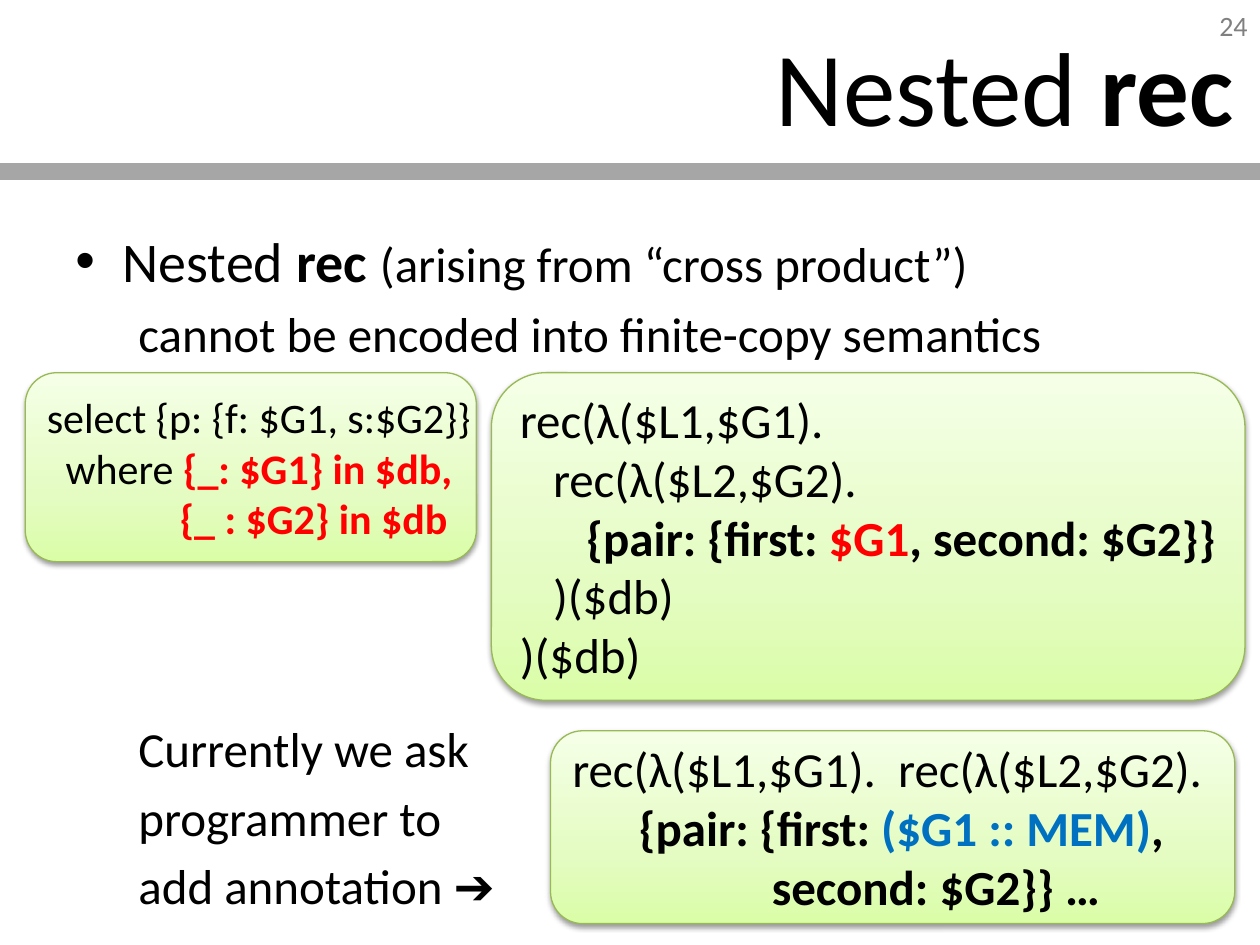
"""Build a slide on nested rec, with code boxes beside the explanation."""
from copy import deepcopy

from lxml.etree import SubElement
from pptx import Presentation
from pptx.dml.color import RGBColor
from pptx.enum.shapes import MSO_CONNECTOR, MSO_SHAPE
from pptx.enum.text import MSO_ANCHOR, PP_ALIGN
from pptx.oxml.ns import qn
from pptx.util import Pt

BOLD = {"bold": True}
RED = {"bold": True, "color": "FF0000"}
BLUE = {"bold": True, "color": "0070C0"}


def rgb(value):
    return RGBColor.from_string(value)


class SlideBuilder:
    font = "Calibri"
    ink = "000000"
    gray = "808080"
    rule_color = "A6A6A6"
    box_line = "98B955"
    box_stops = ((0, "DAFDA7"), (0.35, "E4FCC2"), (1, "F5FFE7"))

    def __init__(self, page):
        self.page = page

    def fill_text(self, shape, paras, size, color=ink, align=PP_ALIGN.LEFT,
                  anchor=MSO_ANCHOR.TOP, wrap=True, space=0):
        frame = shape.text_frame
        for name, value in {"word_wrap": wrap, "vertical_anchor": anchor}.items():
            setattr(frame, name, value)
        for index, (indent, *spans) in enumerate(paras):
            para = frame.paragraphs[0] if index == 0 else frame.add_paragraph()
            for name, value in {"alignment": align, "space_before": Pt(space if index else 0)}.items():
                setattr(para, name, value)
            para._p.get_or_add_pPr().set("marL", str(Pt(indent)))
            for text, extra in spans:
                span = para.add_run()
                span.text = text
                style = {"name": self.font, "size": Pt(size), "bold": False, "color": color} | extra
                span.font.color.rgb = rgb(style.pop("color"))
                for name, value in style.items():
                    setattr(span.font, name, value)
        return frame

    def text(self, left, top, width, height, paras, size, **options):
        box = self.page.shapes.add_textbox(Pt(left), Pt(top), Pt(width), Pt(height))
        return self.fill_text(box, paras, size, **options)

    def bullet(self, para, indent):
        properties = para._p.get_or_add_pPr()
        properties.set("indent", str(-Pt(indent)))
        SubElement(properties, qn("a:buFont"), typeface="Arial")
        SubElement(properties, qn("a:buChar"), char="•")

    def rule(self, top, width, thickness):
        line = self.page.shapes.add_connector(MSO_CONNECTOR.STRAIGHT, 0, Pt(top), Pt(width), Pt(top))
        line.line.color.rgb = rgb(self.rule_color)
        line.line.width = Pt(thickness)
        SubElement(line._element.spPr, qn("a:effectLst"))

    def code(self, left, top, width, height, paras, size):
        box = self.page.shapes.add_shape(
            MSO_SHAPE.ROUNDED_RECTANGLE, Pt(left), Pt(top), Pt(width), Pt(height))
        box.fill.gradient()
        box.fill.gradient_angle = 90
        stops = box._element.spPr.find(".//" + qn("a:gsLst"))
        stops.insert(1, deepcopy(stops[0]))
        for stop, (position, color) in zip(box.fill.gradient_stops, self.box_stops):
            stop.position = position
            stop.color.rgb = rgb(color)
        box.line.color.rgb = rgb(self.box_line)
        box.line.width = Pt(0.75)
        self.shadow(box)
        self.fill_text(box, paras, size, anchor=MSO_ANCHOR.MIDDLE, wrap=False)

    def shadow(self, box):
        box.shadow.inherit = False
        effects = box._element.spPr.find(qn("a:effectLst"))
        outer = SubElement(effects, qn("a:outerShdw"), blurRad=str(Pt(3.1)), dist=str(Pt(1.6)),
                           dir="5400000", rotWithShape="0")
        color = SubElement(outer, qn("a:srgbClr"), val=self.ink)
        SubElement(color, qn("a:alpha"), val="38000")


def main():
    deck = Presentation()
    deck.slide_width, deck.slide_height = Pt(720), Pt(540)
    slide = SlideBuilder(deck.slides.add_slide(deck.slide_layouts[6]))

    slide.text(552, 0, 168, 29, [(0, ("24", {}))], 16, color=slide.gray,
               align=PP_ALIGN.RIGHT, anchor=MSO_ANCHOR.MIDDLE)
    slide.rule(98, 720, 10)
    slide.text(64, 3, 648, 90, [(0, ("Nested ", {}), ("rec", BOLD))], 60,
               align=PP_ALIGN.RIGHT, anchor=MSO_ANCHOR.MIDDLE)

    large = {"size": Pt(32)}
    claim = slide.text(36, 126, 648, 86, [
        (27, ("Nested ", large), ("rec ", large | BOLD), ("(arising from “cross product”)", {})),
        (36, ("cannot be encoded into finite-copy semantics", {})),
    ], 28, space=5.6)
    slide.bullet(claim.paragraphs[0], 27)
    slide.text(36, 407, 276, 122, [
        (36, (line, {})) for line in ("Currently we ask", "programmer to", "add annotation ➔")
    ], 28, space=5.6)

    slide.code(280.8, 213, 430.6, 187.2, [
        (0, ("rec(λ($L1,$G1).", {})),
        (19, ("rec(λ($L2,$G2).", {})),
        (38, ("{pair: {first: ", BOLD), ("$G1", RED), (", second: $G2}}", BOLD)),
        (19, (")($db)", {})),
        (0, (")($db)", {})),
    ], 28)
    slide.code(14.4, 213, 257.8, 108, [
        (0, ("select {p: {f: $G1, s:$G2}}", {})),
        (10.8, ("where ", {}), ("{_: $G1} in $db,", RED)),
        (76, ("{_ : $G2} in $db", RED)),
    ], 24)
    slide.code(314.6, 417.6, 391, 110.2, [
        (0, ("rec(λ($L1,$G1).  rec(λ($L2,$G2).", {})),
        (38, ("{pair: {first: ", BOLD), ("($G1 :: MEM)", BLUE), (",", BOLD)),
        (114, ("second: $G2}} …", BOLD)),
    ], 28)

    deck.save("out.pptx")


if __name__ == "__main__":
    main()
